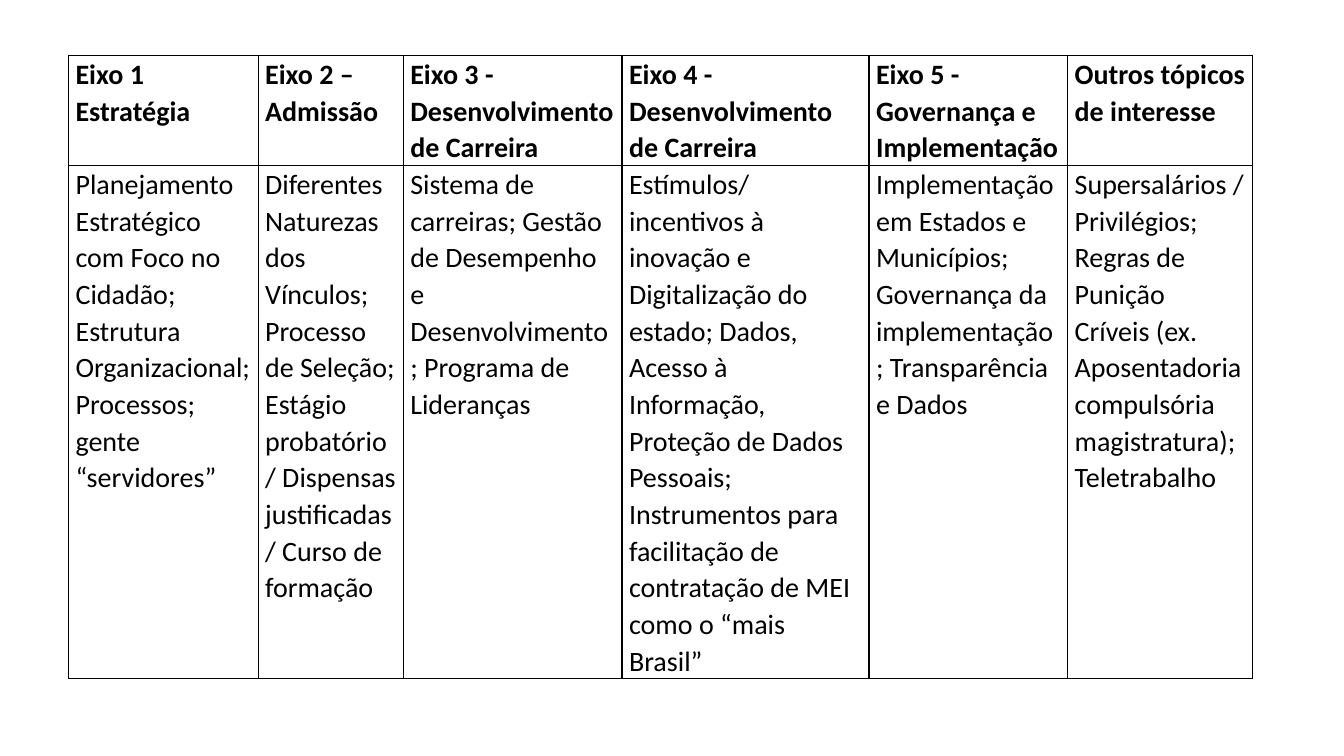
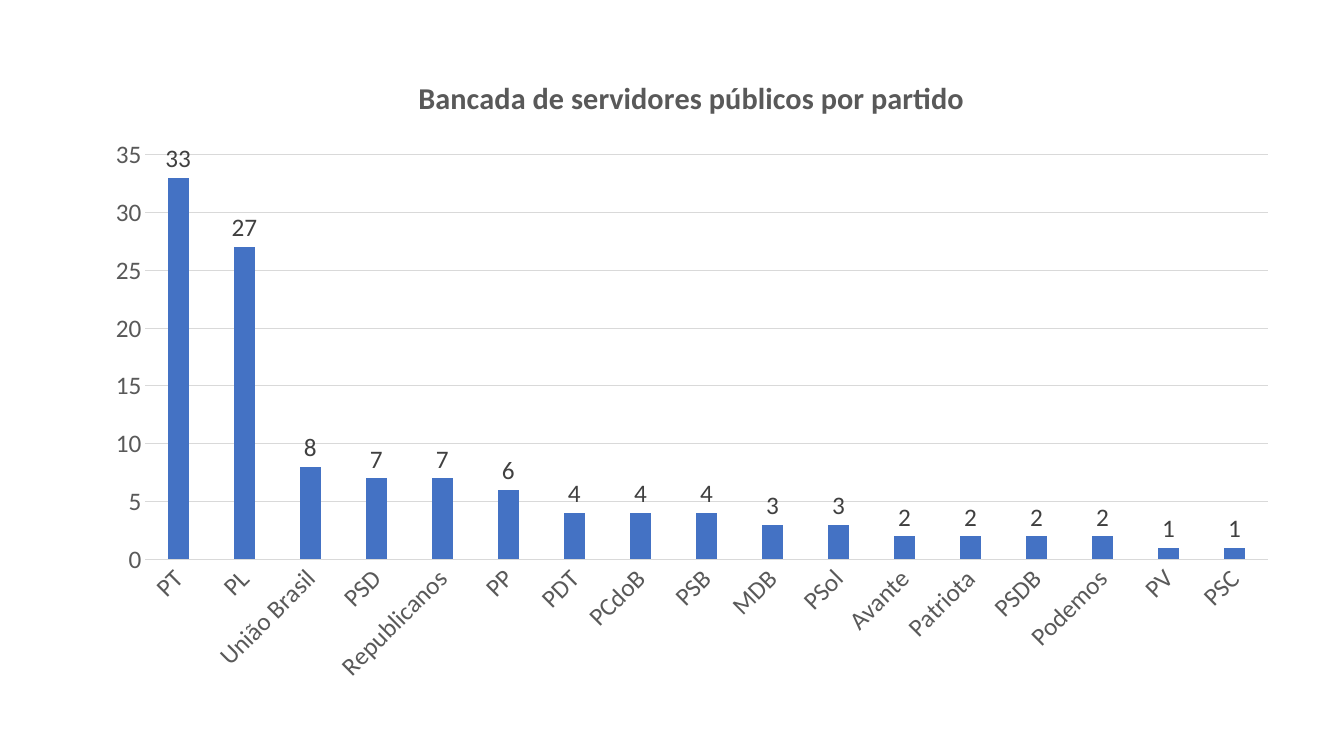
from dataclasses import dataclass

from lxml.etree import SubElement
from pptx import Presentation
from pptx.chart.data import CategoryChartData
from pptx.dml.color import RGBColor as Color
from pptx.enum.chart import XL_CHART_TYPE as ChartType
from pptx.enum.chart import XL_LABEL_POSITION as LabelPosition
from pptx.enum.chart import XL_TICK_MARK as TickMark
from pptx.oxml.ns import qn
from pptx.util import Inches, Pt


@dataclass(frozen=True)
class Theme:
    font: str = "Calibri"
    black: str = "000000"
    axis_text: str = "595959"
    label_text: str = "404040"
    grid: str = "D9D9D9"
    bar: str = "4472C4"
    table_size: float = 20
    chart_size: float = 18
    title_size: float = 21.6
    line_width: float = 0.75


THEME = Theme()


def style(font, size, color, bold=False):
    font.name = THEME.font
    font.size = Pt(size)
    font.bold = bold
    font.color.rgb = Color.from_string(color)


def write(frame, text, line_spacing=None, space_after=None, **font_format):
    """Put one formatted paragraph into a text frame."""
    para = frame.paragraphs[0]
    para.line_spacing = line_spacing
    para.space_after = space_after
    span = para.add_run()
    span.text = text
    style(span.font, **font_format)


deck = Presentation()
deck.slide_width, deck.slide_height = Inches(13.33), Inches(7.5)
blank_layout = deck.slide_layouts[6]

# Table of reform axes
AXES = [
    (1.88, "Eixo 1 Estratégia",
     "Planejamento Estratégico com Foco no Cidadão; Estrutura Organizacional; "
     "Processos; gente “servidores”"),
    (1.44, "Eixo 2 – Admissão",
     "Diferentes Naturezas dos Vínculos; Processo de Seleção; Estágio probatório / "
     "Dispensas justificadas / Curso de formação"),
    (2.17, "Eixo 3 - Desenvolvimento de Carreira",
     "Sistema de carreiras; Gestão de Desempenho e Desenvolvimento; "
     "Programa de Lideranças"),
    (2.45, "Eixo 4 - Desenvolvimento de Carreira",
     "Estímulos/incentivos à inovação e Digitalização do estado; Dados, Acesso à "
     "Informação, Proteção de Dados Pessoais; Instrumentos para facilitação de "
     "contratação de MEI como o “mais Brasil”"),
    (1.97, "Eixo 5 - Governança e Implementação",
     "Implementação em Estados e Municípios; Governança da implementação; "
     "Transparência e Dados"),
    (1.83, "Outros tópicos de interesse",
     "Supersalários / Privilégios; Regras de Punição Críveis (ex. Aposentadoria "
     "compulsória magistratura); Teletrabalho"),
]
ROW_HEIGHTS = (1.05, 4.96)

page = deck.slides.add_slide(blank_layout)
table = page.shapes.add_table(
    len(ROW_HEIGHTS), len(AXES), Inches(0.68), Inches(0.55),
    Inches(sum(width for width, *_ in AXES)), Inches(sum(ROW_HEIGHTS))).table
table.first_row = table.horz_banding = False
for row, height in zip(table.rows, ROW_HEIGHTS):
    row.height = Inches(height)

for column, (width, *texts) in enumerate(AXES):
    table.columns[column].width = Inches(width)
    for row, text in enumerate(texts):
        cell = table.cell(row, column)
        cell.margin_left = cell.margin_right = Inches(0.07)
        cell.margin_top = cell.margin_bottom = 0
        write(cell.text_frame, text, line_spacing=1.07, space_after=Pt(8),
              size=THEME.table_size, color=THEME.black, bold=row == 0)
        properties = cell._tc.get_or_add_tcPr()
        for side in ("a:lnL", "a:lnR", "a:lnT", "a:lnB"):
            border = SubElement(properties, qn(side), w=str(Pt(1)))
            fill = SubElement(border, qn("a:solidFill"))
            SubElement(fill, qn("a:srgbClr"), val=THEME.black)
        cell.fill.background()

# Chart of public servants by party
SERVANTS = {
    "PT": 33, "PL": 27, "União Brasil": 8, "PSD": 7, "Republicanos": 7, "PP": 6,
    "PDT": 4, "PCdoB": 4, "PSB": 4, "MDB": 3, "PSol": 3, "Avante": 2,
    "Patriota": 2, "PSDB": 2, "Podemos": 2, "PV": 1, "PSC": 1,
}

page = deck.slides.add_slide(blank_layout)
chart_data = CategoryChartData()
chart_data.categories = list(SERVANTS)
chart_data.add_series("Series 1", list(SERVANTS.values()))
chart = page.shapes.add_chart(
    ChartType.COLUMN_CLUSTERED, Inches(0.91), Inches(0.52), Inches(11.9),
    Inches(6.37), chart_data).chart
style(chart.font, THEME.chart_size, THEME.black)
chart.has_legend = False
chart.has_title = True
write(chart.chart_title.text_frame, "Bancada de servidores públicos por partido",
      size=THEME.title_size, color=THEME.axis_text, bold=True)

category_axis, value_axis = chart.category_axis, chart.value_axis
for axis in (category_axis, value_axis):
    axis.major_tick_mark = axis.minor_tick_mark = TickMark.NONE
    style(axis.tick_labels.font, THEME.chart_size, THEME.axis_text)
category_axis._element.find(f"{qn('c:txPr')}/{qn('a:bodyPr')}").set("rot", "-2700000")
value_axis.minimum_scale, value_axis.maximum_scale = 0, 35
value_axis.major_unit = 5
value_axis.has_major_gridlines = True
value_axis.format.line.fill.background()
for line in (category_axis.format.line, value_axis.major_gridlines.format.line):
    line.width = Pt(THEME.line_width)
    line.color.rgb = Color.from_string(THEME.grid)

plot = chart.plots[0]
plot.gap_width, plot.overlap = 219, -27
plot.vary_by_categories = False
bars = plot.series[0].format.fill
bars.solid()
bars.fore_color.rgb = Color.from_string(THEME.bar)
plot.has_data_labels = True
labels = plot.data_labels
labels.show_value = True
labels.position = LabelPosition.OUTSIDE_END
style(labels.font, THEME.chart_size, THEME.label_text)

deck.save("out.pptx")
